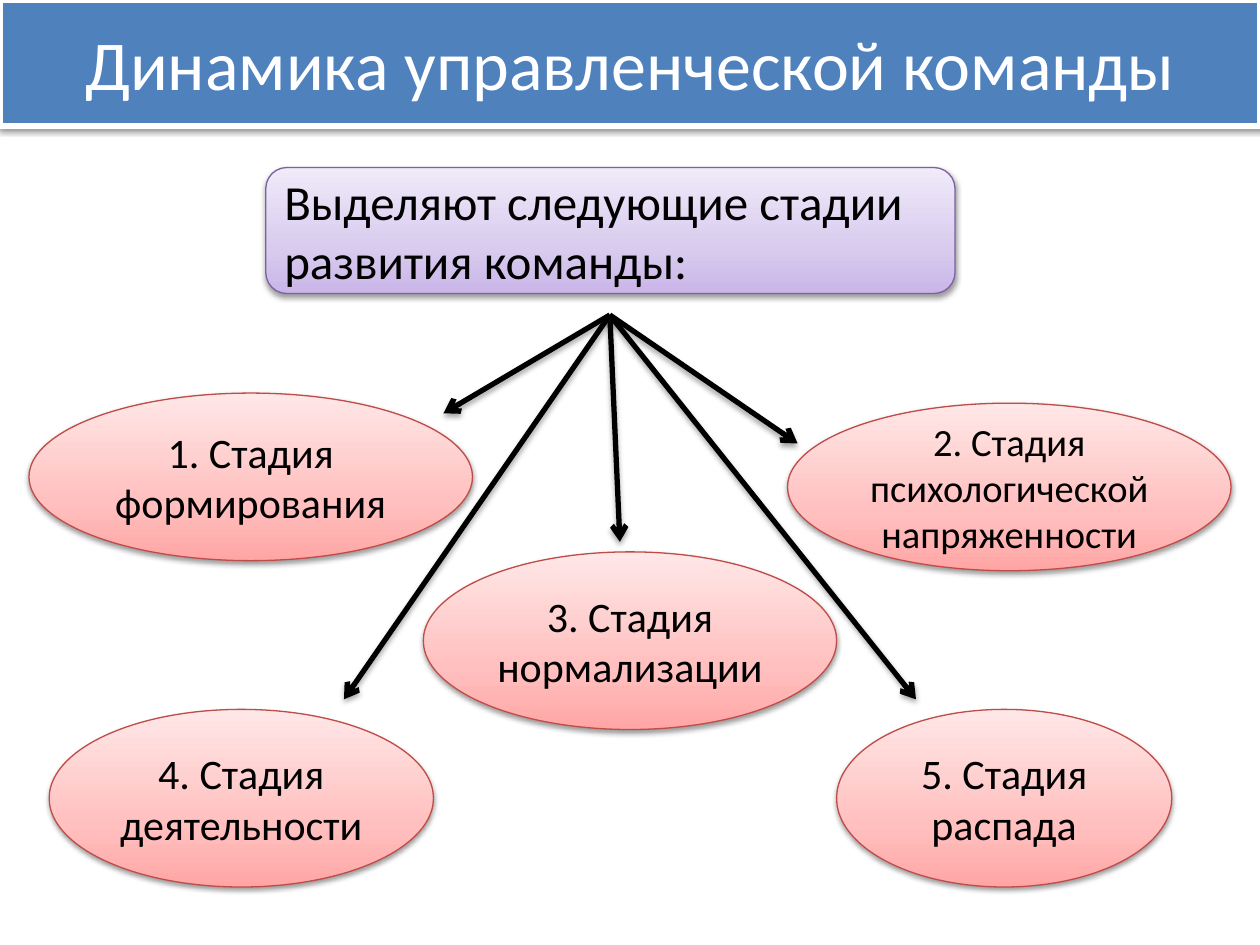
import copy
from dataclasses import dataclass

import lxml.etree
import pptx
import pptx.dml.color
import pptx.enum.dml
import pptx.enum.shapes
import pptx.enum.text
import pptx.oxml.ns
import pptx.util

Inches = pptx.util.Inches
Pt = pptx.util.Pt
qn = pptx.oxml.ns.qn
ShapeKind = pptx.enum.shapes.MSO_SHAPE
Align = pptx.enum.text.PP_ALIGN

FONT = "Calibri"
STOPS = (0, 0.35, 1)
LILAC = ("C9B5E8", "D8CBEE", "F0EAF9")
ROSE = ("FFA6A5", "FFC0BF", "FFE7E7")
FAN_ORIGIN = (4.84, 2.5)


@dataclass(frozen=True)
class Bubble:
    text: str
    left: float
    top: float
    width: float
    height: float
    arrow_end: tuple[float, float] | None = None
    size: int = 24
    kind: ShapeKind = ShapeKind.OVAL
    gradient: tuple[str, str, str] = ROSE
    border: str = "BF4C48"
    align: Align = Align.CENTER


HEADING = Bubble(
    "Выделяют следующие стадии развития команды:", 2.11, 1.33, 5.47, 1,
    size=28, kind=ShapeKind.ROUNDED_RECTANGLE, gradient=LILAC,
    border="7D60A0", align=Align.LEFT,
)
STAGES = [
    Bubble("1. Стадия формирования", 0.23, 3.12, 3.52, 1.33, (3.52, 3.28)),
    Bubble("5. Стадия распада", 6.64, 5.63, 2.66, 1.41, (7.27, 5.55)),
    Bubble("4. Стадия деятельности", 0.39, 5.63, 3.05, 1.41, (2.73, 5.55)),
    Bubble("3. Стадия нормализации", 3.36, 4.38, 3.28, 1.41, (4.92, 4.3)),
    Bubble("2. Стадия психологической напряженности", 6.25, 3.2, 3.52, 1.33,
           (6.33, 3.52), size=22),
]


def rgb(value: str) -> pptx.dml.color.RGBColor:
    return pptx.dml.color.RGBColor.from_string(value)


def add_shadow(properties, opacity: int, distance: float) -> None:
    effects = properties.find(qn("a:effectLst"))
    if effects is None:
        effects = lxml.etree.SubElement(properties, qn("a:effectLst"))
    shadow = lxml.etree.SubElement(
        effects, qn("a:outerShdw"), blurRad=str(Pt(3.1)),
        dist=str(Pt(distance)), dir="5400000", rotWithShape="0",
    )
    color = lxml.etree.SubElement(shadow, qn("a:srgbClr"), val="000000")
    lxml.etree.SubElement(color, qn("a:alpha"), val=str(opacity * 1000))


def set_border(line, color: str, width: float) -> None:
    line.color.rgb = rgb(color)
    line.width = Pt(width)


def set_text(shape, text: str, size: int, color: str, align: Align) -> None:
    frame = shape.text_frame
    frame.text = text
    frame.word_wrap = True
    frame.vertical_anchor = pptx.enum.text.MSO_ANCHOR.MIDDLE
    paragraph = frame.paragraphs[0]
    paragraph.alignment = align
    font = paragraph.runs[0].font
    font.name = FONT
    font.size = Pt(size)
    font.color.rgb = rgb(color)


def set_gradient(shape, colors: tuple[str, str, str]) -> None:
    shape.fill.gradient()
    shape.fill.gradient_angle = 90
    stop_list = shape.element.spPr.find(qn("a:gradFill")).find(qn("a:gsLst"))
    stop_list.append(copy.deepcopy(stop_list[-1]))
    for stop, position, color in zip(shape.fill.gradient_stops, STOPS, colors):
        stop.position = position
        stop.color.rgb = rgb(color)


def draw_title(slide, text: str) -> None:
    title = slide.shapes.title
    title.left, title.top = Inches(0), Inches(0)
    title.width, title.height = Inches(10), Inches(1)
    title.fill.solid()
    title.fill.fore_color.rgb = rgb("4F81BD")
    set_border(title.line, "FFFFFF", 3)
    title.shadow.inherit = False
    add_shadow(title.element.spPr, 38, 1.6)
    set_text(title, text, 40, "FFFFFF", Align.CENTER)


def draw_bubble(slide, bubble: Bubble) -> None:
    shape = slide.shapes.add_shape(
        bubble.kind, Inches(bubble.left), Inches(bubble.top),
        Inches(bubble.width), Inches(bubble.height),
    )
    set_gradient(shape, bubble.gradient)
    set_border(shape.line, bubble.border, 0.75)
    shape.shadow.inherit = False
    add_shadow(shape.element.spPr, 38, 1.6)
    set_text(shape, bubble.text, bubble.size, "000000", bubble.align)


def draw_arrow(slide, end: tuple[float, float]) -> None:
    arrow = slide.shapes.add_connector(
        pptx.enum.shapes.MSO_CONNECTOR.STRAIGHT,
        *(Inches(value) for value in FAN_ORIGIN + end),
    )
    set_border(arrow.line, "000000", 3)
    properties = arrow.element.spPr
    lxml.etree.SubElement(
        properties.find(qn("a:ln")), qn("a:tailEnd"), type="arrow"
    )
    add_shadow(properties, 35, 1.8)


def main() -> None:
    deck = pptx.Presentation()
    deck.slide_width, deck.slide_height = Inches(10), Inches(7.5)
    slide = deck.slides.add_slide(deck.slide_layouts[5])
    draw_title(slide, "Динамика управленческой команды")
    for bubble in [HEADING, *STAGES]:
        draw_bubble(slide, bubble)
    for stage in reversed(STAGES):
        draw_arrow(slide, stage.arrow_end)
    deck.save("out.pptx")


if __name__ == "__main__":
    main()
